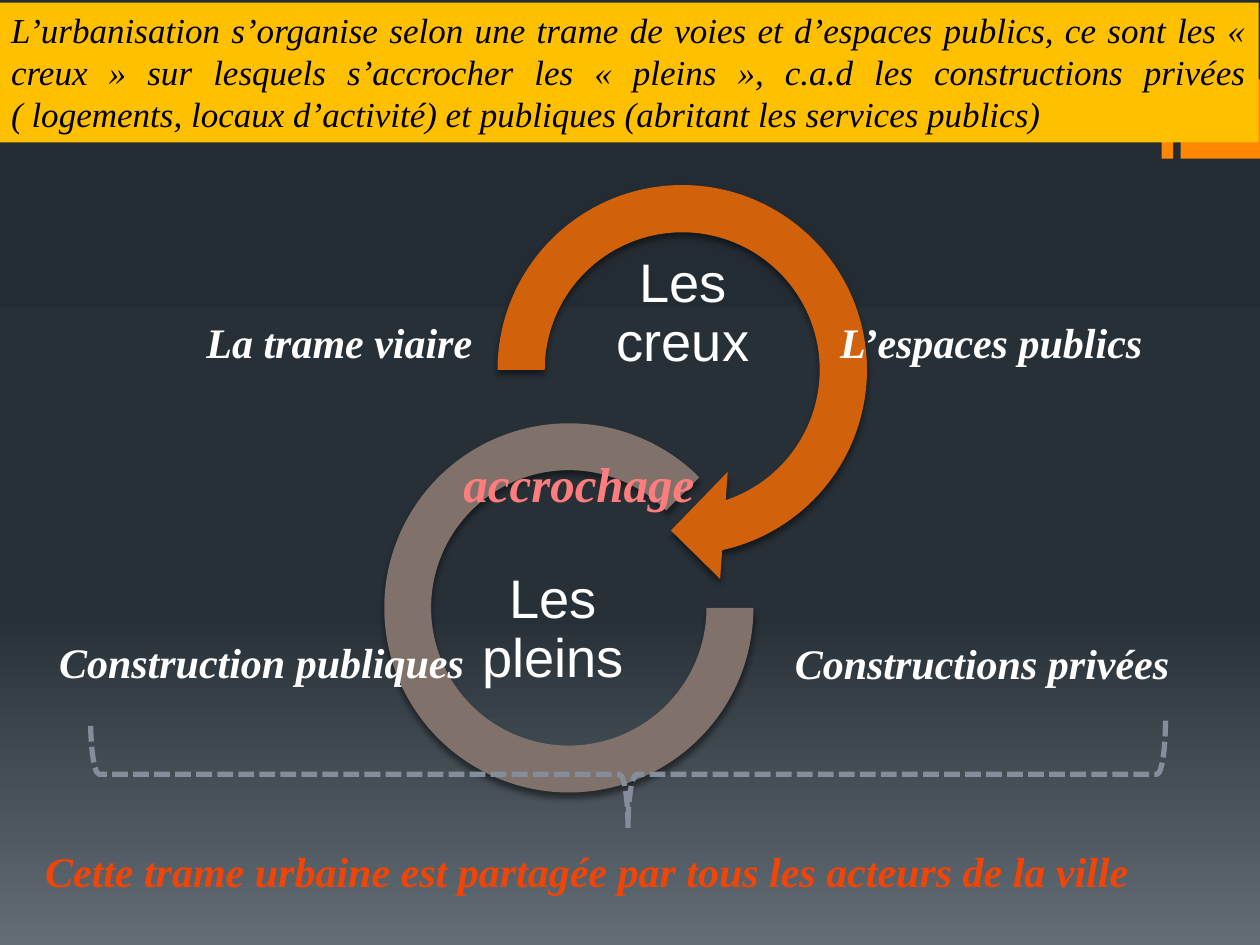
from copy import deepcopy

from lxml import etree
from pptx import Presentation
from pptx.dml.color import RGBColor
from pptx.enum.dml import MSO_LINE
from pptx.enum.shapes import MSO_SHAPE
from pptx.enum.text import MSO_ANCHOR, MSO_AUTO_SIZE, PP_ALIGN
from pptx.oxml.ns import qn
from pptx.util import Inches, Pt

RECTANGLE, ELLIPSE = MSO_SHAPE.RECTANGLE, MSO_SHAPE.OVAL
CIRCULAR_ARROW, BLOCK_ARC = MSO_SHAPE.CIRCULAR_ARROW, MSO_SHAPE.BLOCK_ARC
LEFT_BRACE = MSO_SHAPE.LEFT_BRACE
SHORT_DASH = MSO_LINE.SQUARE_DOT
TOP, MIDDLE = MSO_ANCHOR.TOP, MSO_ANCHOR.MIDDLE
GROW = MSO_AUTO_SIZE.SHAPE_TO_FIT_TEXT
LEFT, CENTER, JUSTIFY = PP_ALIGN.LEFT, PP_ALIGN.CENTER, PP_ALIGN.JUSTIFY

NIGHT = RGBColor(0x24, 0x2C, 0x33)
SLATE = RGBColor(0x27, 0x30, 0x37)
STEEL = RGBColor(0x63, 0x6D, 0x76)
ORANGE = RGBColor(0xFF, 0x86, 0x00)
RUST = RGBColor(0xD2, 0x61, 0x0C)
TAUPE = RGBColor(0x80, 0x71, 0x6A)
GREY_BLUE = RGBColor(0x83, 0x8D, 0x9B)
AMBER = RGBColor(0xFF, 0xC0, 0x00)
PINK = RGBColor(0xFF, 0x7D, 0x7D)
VERMILION = RGBColor(0xF0, 0x45, 0x07)
WHITE = RGBColor(0xFF, 0xFF, 0xFF)
BLACK = RGBColor(0x00, 0x00, 0x00)

SERIF = {"name": "Times New Roman", "italic": True}
LABEL = {**SERIF, "size": Pt(24), "bold": True}
RING_TITLE = {"name": "Arial", "size": Pt(31)}

prs = Presentation()
prs.slide_width, prs.slide_height = Inches(10), Inches(7.5)
slide = prs.slides.add_slide(prs.slide_layouts[6])
shapes = slide.shapes

background = slide.background.fill
background.gradient()
background.gradient_angle = 270
stop_list = slide._element.find(".//" + qn("a:gsLst"))
stop_list.append(deepcopy(stop_list[-1]))
for stop, (position, color) in zip(background.gradient_stops, [(0, NIGHT), (0.65, SLATE), (1, STEEL)]):
    stop.position = position
    stop.color.rgb = color


def add_figure(preset, box, color=None, adjustments=()):
    figure = shapes.add_shape(preset, *map(Inches, box))
    figure.shadow.inherit = False
    figure.line.fill.background()
    if color is None:
        figure.fill.background()
    else:
        figure.fill.solid()
        figure.fill.fore_color.rgb = color
    for index, value in enumerate(adjustments):
        figure.adjustments[index] = value
    return figure


def write(holder, text, color, font, align=LEFT, anchor=TOP, **frame_format):
    frame = holder.text_frame
    frame.vertical_anchor = anchor
    for key, value in frame_format.items():
        setattr(frame, key, value)
    paragraph = frame.paragraphs[0]
    paragraph.text = text
    paragraph.alignment = align
    for run in paragraph.runs:
        run.font.color.rgb = color
        for key, value in font.items():
            setattr(run.font, key, value)
    return paragraph


for left, width in [(9.22, 0.09), (9.37, 0.63)]:
    add_figure(RECTANGLE, (left, 0.63, width, 0.63), ORANGE)

rings = [
    (CIRCULAR_ARROW, (3.71, 1.23, 3.41, 3.41), RUST, (0.11, 11.42, 45, 108, 0.125),
     "Les creux", (4.47, 2.02, 1.9, 0.95)),
    (BLOCK_ARC, (3.05, 3.36, 2.93, 2.93), TAUPE, (0, 189, 0.127),
     "Les pleins", (3.44, 4.53, 1.9, 0.95)),
]
for preset, box, color, adjustments, title, title_box in rings:
    ring = add_figure(preset, box, color, adjustments)
    effects = ring._element.spPr.find(qn("a:effectLst"))
    shadow = etree.SubElement(effects, qn("a:outerShdw"), blurRad=str(Pt(3.8)), dist=str(Pt(3)),
                              dir="5400000", rotWithShape="0")
    shade = etree.SubElement(shadow, qn("a:srgbClr"), val="000000")
    etree.SubElement(shade, qn("a:alpha"), val="48000")
    margins = {f"margin_{side}": Inches(0.02) for side in ("left", "top", "right", "bottom")}
    ring_title = write(shapes.add_textbox(*map(Inches, title_box)), title, WHITE, RING_TITLE,
                       CENTER, MIDDLE, word_wrap=True, **margins)
    ring_title.line_spacing = 0.9

labels = [
    ("L’espaces publics", (6.57, 2.46, 2.69, 0.5), WHITE),
    ("La trame viaire", (1.54, 2.46, 2.33, 0.5), WHITE),
    ("Constructions privées", (6.21, 5.01, 3.2, 0.5), WHITE),
    ("Construction publiques", (0.37, 5, 3.45, 0.5), WHITE),
    ("Cette trame urbaine est partagée par tous les acteurs de la ville", (0.26, 6.66, 9.23, 0.5), VERMILION),
]
for text, box, color in labels:
    write(shapes.add_textbox(*map(Inches, box)), text, color, LABEL, word_wrap=False, auto_size=GROW)

hooking = add_figure(ELLIPSE, (3.11, 3.28, 2.97, 1.1))
write(hooking, "accrochage", PINK, {**LABEL, "size": Pt(28)}, CENTER, MIDDLE)

brace = add_figure(LEFT_BRACE, (4.56, 1.88, 0.85, 8.53), adjustments=(0.08, 0.5))
brace.rotation = 270
brace.line.color.rgb = GREY_BLUE
brace.line.width = Pt(3)
brace.line.dash_style = SHORT_DASH

banner = add_figure(RECTANGLE, (-0.01, 0.02, 10, 1.11), AMBER)
write(
    banner,
    "L’urbanisation s’organise selon une trame de voies et d’espaces publics, ce sont les "
    "« creux » sur lesquels s’accrocher les « pleins », c.a.d les constructions privées\v"
    "( logements, locaux d’activité) et publiques (abritant les services publics)",
    BLACK, {**SERIF, "size": Pt(20)}, JUSTIFY, word_wrap=True, auto_size=GROW,
)

prs.save("out.pptx")
